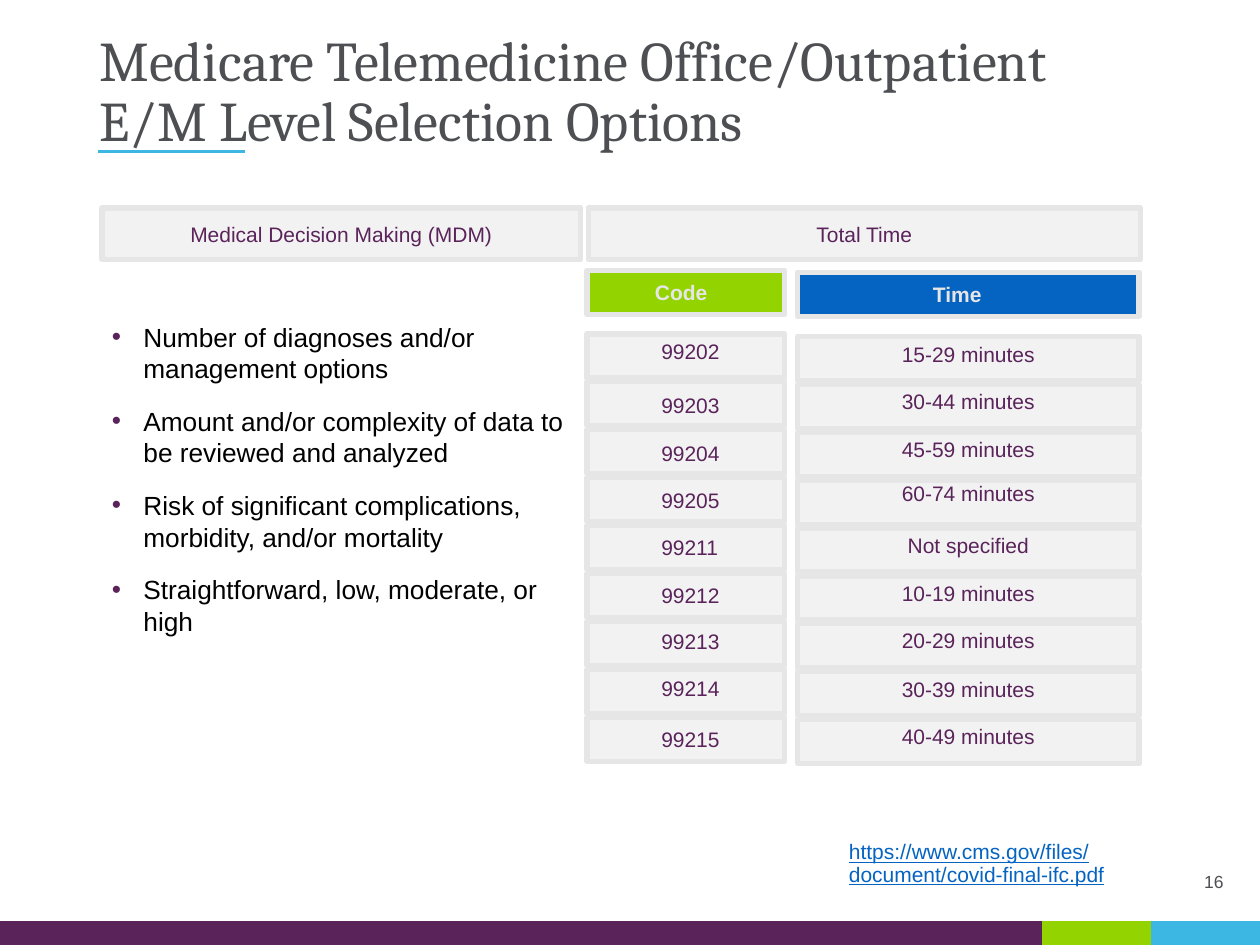
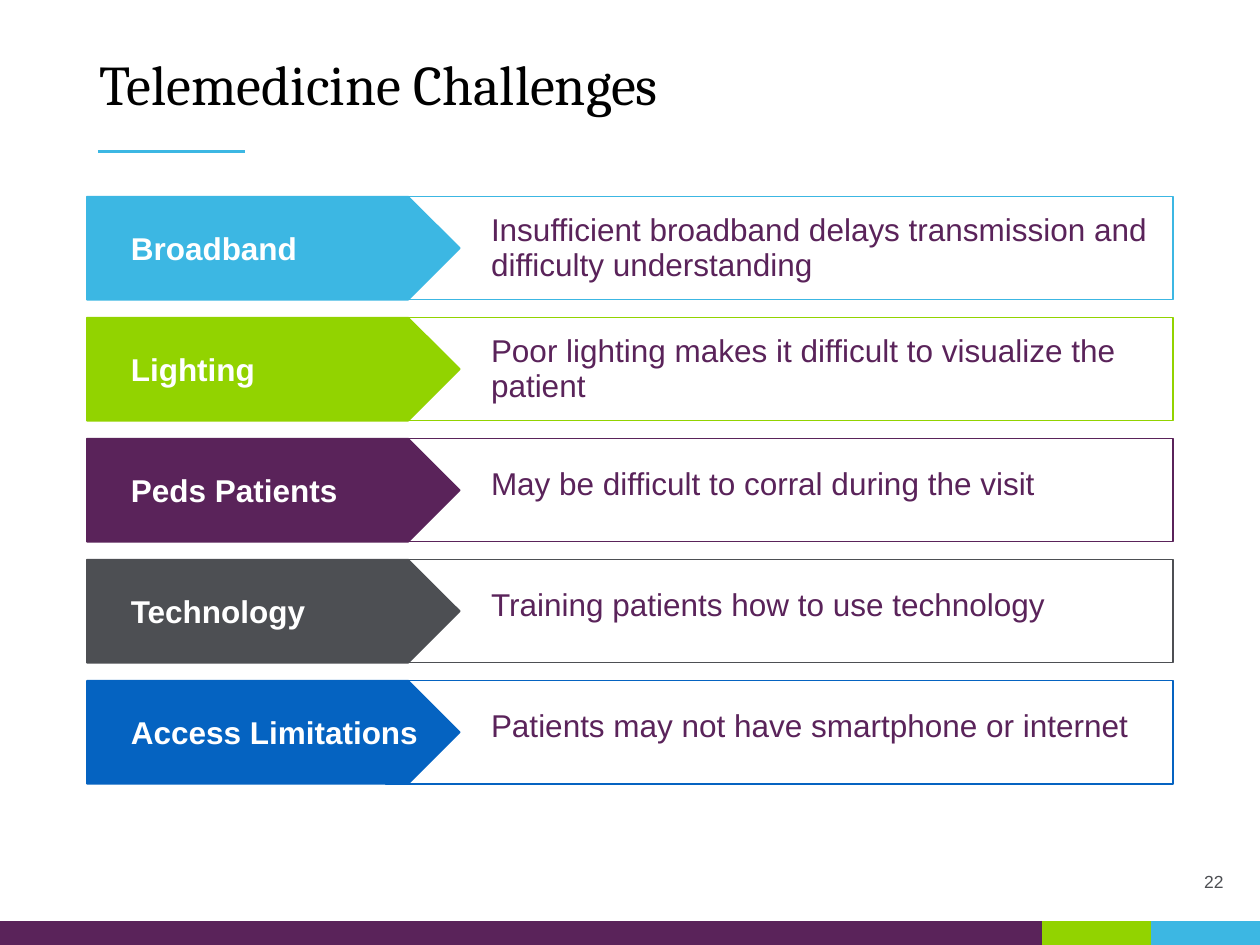
from lxml import etree
from pptx import Presentation
from pptx.dml.color import RGBColor
from pptx.enum import shapes, text
from pptx.oxml.ns import qn
from pptx.util import Pt

PLUM = RGBColor(0x5A, 0x23, 0x5A)
LIME = RGBColor(0x92, 0xD3, 0x00)
SKY = RGBColor(0x3C, 0xB7, 0xE3)
BLUE = RGBColor(0x05, 0x63, 0xC1)
SLATE = RGBColor(0x4D, 0x4F, 0x53)
SILVER = RGBColor(0xE7, 0xE6, 0xE6)
PALE = RGBColor(0xF2, 0xF2, 0xF2)
WHITE = RGBColor(0xFF, 0xFF, 0xFF)
BLACK = RGBColor(0, 0, 0)

RECT = shapes.MSO_SHAPE.RECTANGLE
ARROW = shapes.MSO_SHAPE.PENTAGON
LEFT, MID, RIGHT = text.PP_ALIGN.LEFT, text.PP_ALIGN.CENTER, text.PP_ALIGN.RIGHT
TOP, CENTRE, BOTTOM = (text.MSO_ANCHOR.TOP, text.MSO_ANCHOR.MIDDLE,
                       text.MSO_ANCHOR.BOTTOM)


def block(slide, area, fill=None, edge=None, weight=3, kind=RECT):
    """Add a flat shape; area is left, top, width, height in points."""
    shape = slide.shapes.add_shape(kind, *map(Pt, area))
    shape.shadow.inherit = False
    if fill is None:
        shape.fill.background()
    else:
        shape.fill.solid()
        shape.fill.fore_color.rgb = fill
    if edge is None:
        shape.line.fill.background()
    else:
        shape.line.color.rgb = edge
        shape.line.width = Pt(weight)
    return shape


def write(slide, area, words, size=12, color=PLUM, align=LEFT, anchor=TOP,
          space=0.9, bold=False, font="Arial"):
    """Add a wrapped text box and return its text frame."""
    frame = slide.shapes.add_textbox(*map(Pt, area)).text_frame
    frame.text = words
    frame.word_wrap = True
    frame.vertical_anchor = anchor
    for para in frame.paragraphs:
        para.alignment = align
        para.line_spacing = space
        for run in para.runs:
            run.font.name = font
            run.font.size = Pt(size)
            run.font.bold = bold
            run.font.color.rgb = color
    return frame


deck = Presentation()
deck.slide_width, deck.slide_height = Pt(720), Pt(540)

# Shared title, rule, page number and foot band
pages = [
    ("Medicare Telemedicine Office/Outpatient E/M Level Selection Options",
     15.1, SLATE, "16"),
    ("Telemedicine Challenges", 28.8, BLACK, "22"),
]
bands = [(0, 595.5, PLUM), (595.5, 62.25, LIME), (657.75, 62.25, SKY)]
for title, top, color, number in pages:
    slide = deck.slides.add_slide(deck.slide_layouts[6])
    rule = slide.shapes.add_connector(
        shapes.MSO_CONNECTOR.STRAIGHT, Pt(56), Pt(86.5), Pt(140), Pt(86.5))
    rule.line.color.rgb = SKY
    rule.line.width = Pt(1.5)
    etree.SubElement(rule._element.spPr, qn("a:effectLst"))
    write(slide, (85.7, 494, 620.6, 19.4), number, 10, SLATE, RIGHT, BOTTOM)
    for left, width, fill in bands:
        block(slide, (left, 526.3, width, 13.7), fill)
    write(slide, (49.7, top, 620.6, 44.6), title, 32, color, font="Cambria")

# Level selection options
levels, hurdles = deck.slides

link = write(levels, (478, 477.4, 188.6, 33),
             "https://www.cms.gov/files/document/covid-final-ifc.pdf", color=BLUE)
link.paragraphs[0].runs[0].font.underline = True

factors = [
    "Number of diagnoses and/or management options",
    "Amount and/or complexity of data to be reviewed and analyzed",
    "Risk of significant complications, morbidity, and/or mortality",
    "Straightforward, low, moderate, or high",
]
frame = write(levels, (56.9, 180, 273.6, 298), "\n".join(factors), 15, BLACK,
              space=Pt(18))
for index, para in enumerate(frame.paragraphs):
    para.space_before = Pt(6 if index else 0)
    para.space_after = Pt(6)
    props = para._p.get_or_add_pPr()
    props.set("marL", str(Pt(18)))
    props.set("indent", str(-Pt(18)))
    tint = etree.SubElement(props, qn("a:buClr"))
    etree.SubElement(tint, qn("a:srgbClr")).set("val", str(PLUM))
    etree.SubElement(props, qn("a:buFont")).set("typeface", "Arial")
    etree.SubElement(props, qn("a:buChar")).set("char", "•")

for words, left, width in [("Medical Decision Making (MDM)", 58.3, 273.6),
                           ("Total Time", 336.2, 315.4)]:
    head = block(levels, (left, 118.8, width, 29.5), PALE, SILVER)
    head.text_frame.text = words
    head.text_frame.vertical_anchor = CENTRE
    para = head.text_frame.paragraphs[0]
    para.alignment = MID
    font = para.runs[0].font
    font.name, font.size, font.color.rgb = "Arial", Pt(12), PLUM

CODE, TIME = (335.5, 113), (455.8, 195.1)  # left and width of each column
ROW, STEP = 25.2, 27.38
for words, (left, width), top, fill, middle in [
        ("Code", CODE, 154.4, LIME, 389.2), ("Time", TIME, 155.5, BLUE, 547)]:
    block(levels, (left, top, width, ROW), fill, SILVER)
    write(levels, (middle - 30, top - 1, 60, 27.4), words, 12, SILVER, MID,
          CENTRE, 1, True)

# Code and its text top, time and its text top
rows = [
    ("99202", 191.5, "15-29 minutes", 193),
    ("99203", 222.5, "30-44 minutes", 220.3),
    ("99204", 249.8, "45-59 minutes", 247.7),
    ("99205", 276.5, "60-74 minutes", 272.9),
    ("99211", 303.8, "Not specified", 302.4),
    ("99212", 331.2, "10-19 minutes", 329.8),
    ("99213", 357.1, "20-29 minutes", 356.4),
    ("99214", 383.8, "30-39 minutes", 384.5),
    ("99215", 413.3, "40-49 minutes", 411.8),
]
for index in range(len(rows)):
    for (left, width), first in [(CODE, 190.8), (TIME, 192.2)]:
        block(levels, (left, first + index * STEP, width, ROW), PALE, SILVER)
for code, high, time, low in rows:
    write(levels, (370.8, high, 59.8, 26), code)
    write(levels, (481.7, low, 143.3, 26), time, align=MID)

# Challenges: label, detail, colour, line pitch
items = [
    ("Broadband", "Insufficient broadband delays transmission and difficulty "
     "understanding", SKY, 20),
    ("Lighting", "Poor lighting makes it difficult to visualize the patient",
     LIME, 20),
    ("Peds Patients", "May be difficult to corral during the visit", PLUM, 13.1),
    ("Technology", "Training patients how to use technology", SLATE, 13.1),
    ("Access Limitations", "Patients may not have smartphone or internet",
     BLUE, 13.1),
]
for index, (label, detail, color, pitch) in enumerate(items):
    top = 112.3 + index * 69.15
    block(hurdles, (220.3, top, 450, 59), None, color, 0.85)
    block(hurdles, (49.7, top, 213.1, 59), color, color, 0.85, ARROW)
    write(hurdles, (67.7, top + 14.9, 190, 29.1), label, 18, WHITE, LEFT,
          CENTRE, 1, True)
    frame = write(hurdles, (277.9, top + 7.9, 381.6, 43.2), detail, 18,
                  anchor=CENTRE, space=Pt(pitch))
    frame.margin_left = frame.margin_right = Pt(2.7)
    frame.margin_top = frame.margin_bottom = Pt(1.4)

deck.save("out.pptx")
